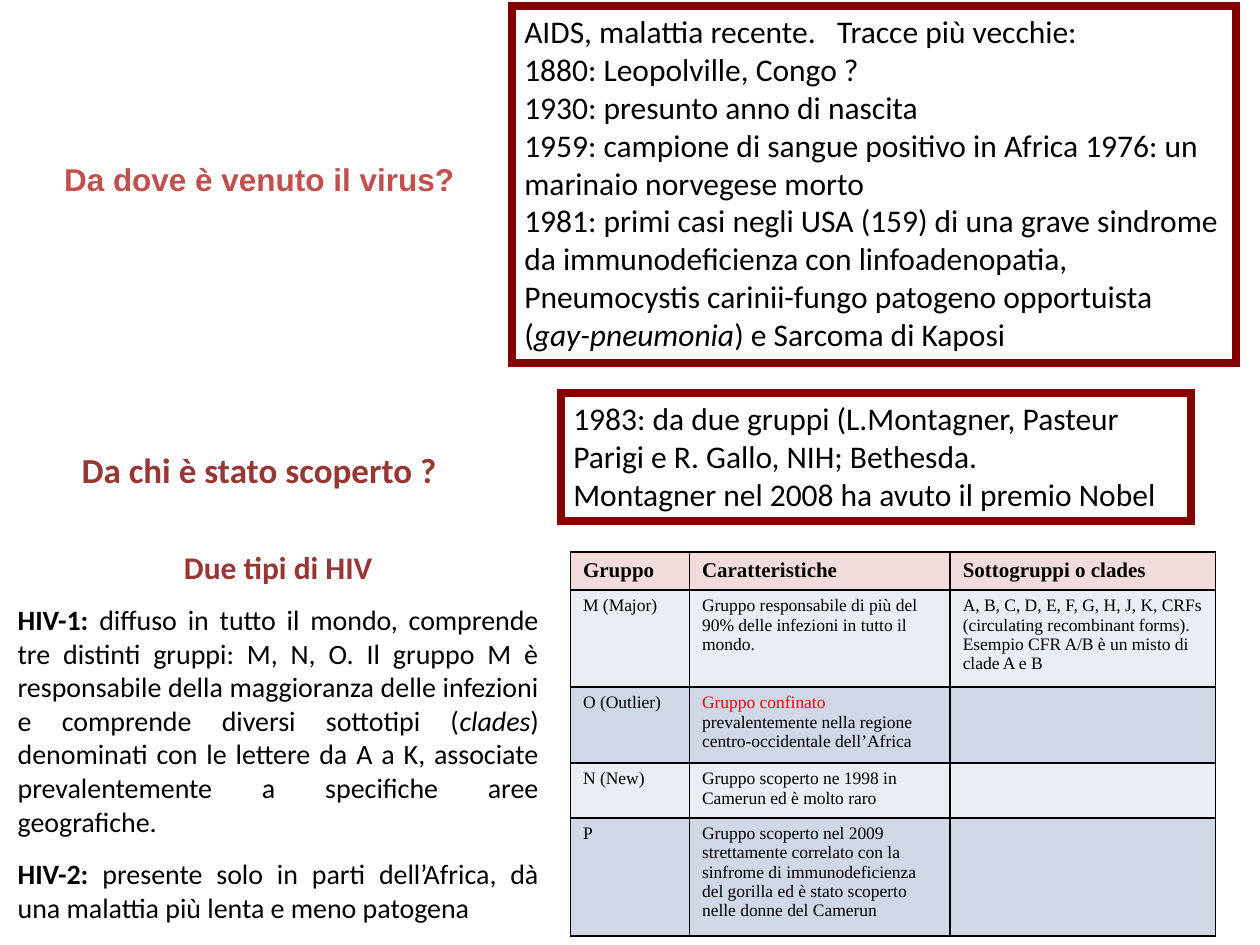
from lxml import etree
from pptx import Presentation
from pptx.dml.color import RGBColor
from pptx.enum.shapes import MSO_SHAPE
from pptx.enum.text import MSO_ANCHOR, MSO_AUTO_SIZE, PP_ALIGN
from pptx.oxml import parse_xml
from pptx.oxml.ns import nsdecls, qn
from pptx.util import Pt

RECTANGLE = MSO_SHAPE.RECTANGLE
TOP = MSO_ANCHOR.TOP
GROW = MSO_AUTO_SIZE.SHAPE_TO_FIT_TEXT
LEFT, CENTER, JUSTIFY = PP_ALIGN.LEFT, PP_ALIGN.CENTER, PP_ALIGN.JUSTIFY

BLACK = RGBColor(0x00, 0x00, 0x00)
WHITE = RGBColor(0xFF, 0xFF, 0xFF)
RED = RGBColor(0xFF, 0x00, 0x00)
CORAL = RGBColor(0xC0, 0x50, 0x4D)
BRICK = RGBColor(0x95, 0x37, 0x35)
MAROON = RGBColor(0x84, 0x00, 0x00)
HEADER_PINK = RGBColor(0xF2, 0xDC, 0xDB)
BANDS = (RGBColor(0xE9, 0xED, 0xF4), RGBColor(0xD0, 0xD8, 0xE8))

ORIGIN_LINES = [
    ["AIDS, malattia recente.   Tracce più vecchie:"],
    ["1880: Leopolville, Congo ?"],
    ["1930: presunto anno di nascita"],
    ["1959: campione di sangue positivo in Africa 1976: un marinaio norvegese morto"],
    ["1981: primi casi negli USA (159) di una grave sindrome da immunodeficienza "
     "con linfoadenopatia, Pneumocystis carinii-fungo patogeno opportuista (",
     ("gay-pneumonia", {"italic": True}), ") e Sarcoma di Kaposi"],
]
DISCOVERY_LINES = [
    ["1983: da due gruppi (L.Montagner, Pasteur Parigi e R. Gallo, NIH; Bethesda."],
    ["Montagner nel 2008 ha avuto il premio Nobel"],
]
HIV_1 = [
    ("HIV-1: ", {"bold": True}),
    "diffuso in tutto il mondo, comprende tre distinti gruppi: M, N, O. Il gruppo M è "
    "responsabile della maggioranza delle infezioni e comprende diversi sottotipi (",
    ("clades", {"italic": True}),
    ") denominati con le lettere da A a K, associate prevalentemente a specifiche "
    "aree geografiche.",
]
HIV_2 = [
    ("HIV-2: ", {"bold": True}),
    "presente solo in parti dell’Africa, dà una malattia più lenta e meno patogena",
]
GROUP_ROWS = [
    (["Gruppo"], ["Caratteristiche"], ["Sottogruppi o clades"]),
    (["M (Major)"],
     ["Gruppo responsabile di più del 90% delle infezioni in tutto il mondo."],
     ["A, B, C, D, E, F, G, H, J, K, CRFs (circulating recombinant forms). "
      "Esempio CFR A/B è un misto di clade A e B"]),
    (["O (Outlier)"],
     [("Gruppo confinato ", {"color": RED}),
      "prevalentemente nella regione centro-occidentale dell’Africa"], []),
    (["N (New)"], ["Gruppo scoperto ne 1998 in Camerun ed è molto raro"], []),
    (["P"],
     ["Gruppo scoperto nel 2009 strettamente correlato con la sinfrome di "
      "immunodeficienza del gorilla ed è stato scoperto nelle donne del Camerun"], []),
]
COLUMN_WIDTHS = (68, 149, 151.5)
ROW_HEIGHTS = (21, 55.5, 43.5, 31, 67.5)


def write_para(para, spans, size=18, font="Calibri", color=BLACK, bold=False,
               align=LEFT, before=0):
    """Fill para with spans: plain strings, or (string, overrides) pairs."""
    para.alignment = align
    para.space_before = Pt(before)
    for item in spans:
        text, extra = (item, {}) if isinstance(item, str) else item
        span = para.add_run()
        span.text = text
        span.font.size = Pt(size)
        span.font.name = font
        span.font.color.rgb = extra.get("color", color)
        span.font.bold = extra.get("bold", bold)
        span.font.italic = extra.get("italic", False)


def write_lines(shape, lines, wrap=True, **style):
    frame = shape.text_frame
    frame.word_wrap = wrap
    frame.auto_size = GROW
    frame.vertical_anchor = TOP
    for index, spans in enumerate(lines):
        para = frame.add_paragraph() if index else frame.paragraphs[0]
        write_para(para, spans, **style)


def add_rectangle(page, box):
    shape = page.shapes.add_shape(RECTANGLE, *map(Pt, box))
    shape.shadow.inherit = False
    return shape


def add_framed_text(page, box, lines):
    shape = add_rectangle(page, box)
    shape.fill.background()
    shape.line.color.rgb = MAROON
    shape.line.width = Pt(4.5)
    outline = shape.line._get_or_add_ln()
    etree.SubElement(outline, qn("a:miter"), lim="800000")
    write_lines(shape, lines)


def add_origin_question(page, box):
    label = page.shapes.add_textbox(*map(Pt, box))
    write_lines(label, [["Da dove è venuto il virus?"]], wrap=False,
                font="Arial", color=CORAL, bold=True)


def add_discovery_question(page, box):
    label = add_rectangle(page, box)
    label.fill.solid()
    label.fill.fore_color.rgb = WHITE
    label.line.fill.background()
    write_lines(label, [["Da chi è stato scoperto ?"]],
                size=20, color=BRICK, bold=True)


def add_hiv_types(page, box):
    text_box = page.shapes.add_textbox(*map(Pt, box))
    write_lines(text_box, [["Due tipi di HIV"]], color=BRICK, bold=True, align=CENTER)
    for spans, gap in ((HIV_1, 9.75), (HIV_2, 11)):
        para = text_box.text_frame.add_paragraph()
        write_para(para, spans, size=16, align=JUSTIFY, before=gap)


def set_borders(cell, width=1):
    properties = cell._tc.get_or_add_tcPr()
    for side in ("lnL", "lnR", "lnT", "lnB"):
        properties.append(parse_xml(
            f'<a:{side} {nsdecls("a")} w="{Pt(width)}"><a:solidFill>'
            f'<a:srgbClr val="{BLACK}"/></a:solidFill></a:{side}>'))


def add_group_table(page, box):
    table = page.shapes.add_table(
        len(GROUP_ROWS), len(COLUMN_WIDTHS), *map(Pt, box)).table
    for column, width in zip(table.columns, COLUMN_WIDTHS):
        column.width = Pt(width)
    for row_index, (cells, height) in enumerate(zip(GROUP_ROWS, ROW_HEIGHTS)):
        table.rows[row_index].height = Pt(height)
        is_header = row_index == 0
        for column_index, spans in enumerate(cells):
            cell = table.cell(row_index, column_index)
            set_borders(cell)
            cell.fill.solid()
            cell.fill.fore_color.rgb = (
                HEADER_PINK if is_header else BANDS[(row_index - 1) % 2])
            write_para(cell.text_frame.paragraphs[0], spans, font="Times New Roman",
                       size=12 if is_header else 10, bold=is_header)


def main():
    deck = Presentation()
    deck.slide_width, deck.slide_height = Pt(720), Pt(540)
    page = deck.slides.add_slide(deck.slide_layouts.get_by_name("Blank"))
    add_framed_text(page, (292.5, 3.5, 414, 204), ORIGIN_LINES)
    add_origin_question(page, (29.5, 88, 240, 29))
    add_discovery_question(page, (39.5, 253, 248, 31.5))
    add_framed_text(page, (320.5, 224.5, 360, 73), DISCOVERY_LINES)
    add_hiv_types(page, (3, 309.5, 312, 224))
    add_group_table(page, (326, 315.5, sum(COLUMN_WIDTHS), sum(ROW_HEIGHTS)))
    deck.save("out.pptx")


if __name__ == "__main__":
    main()
